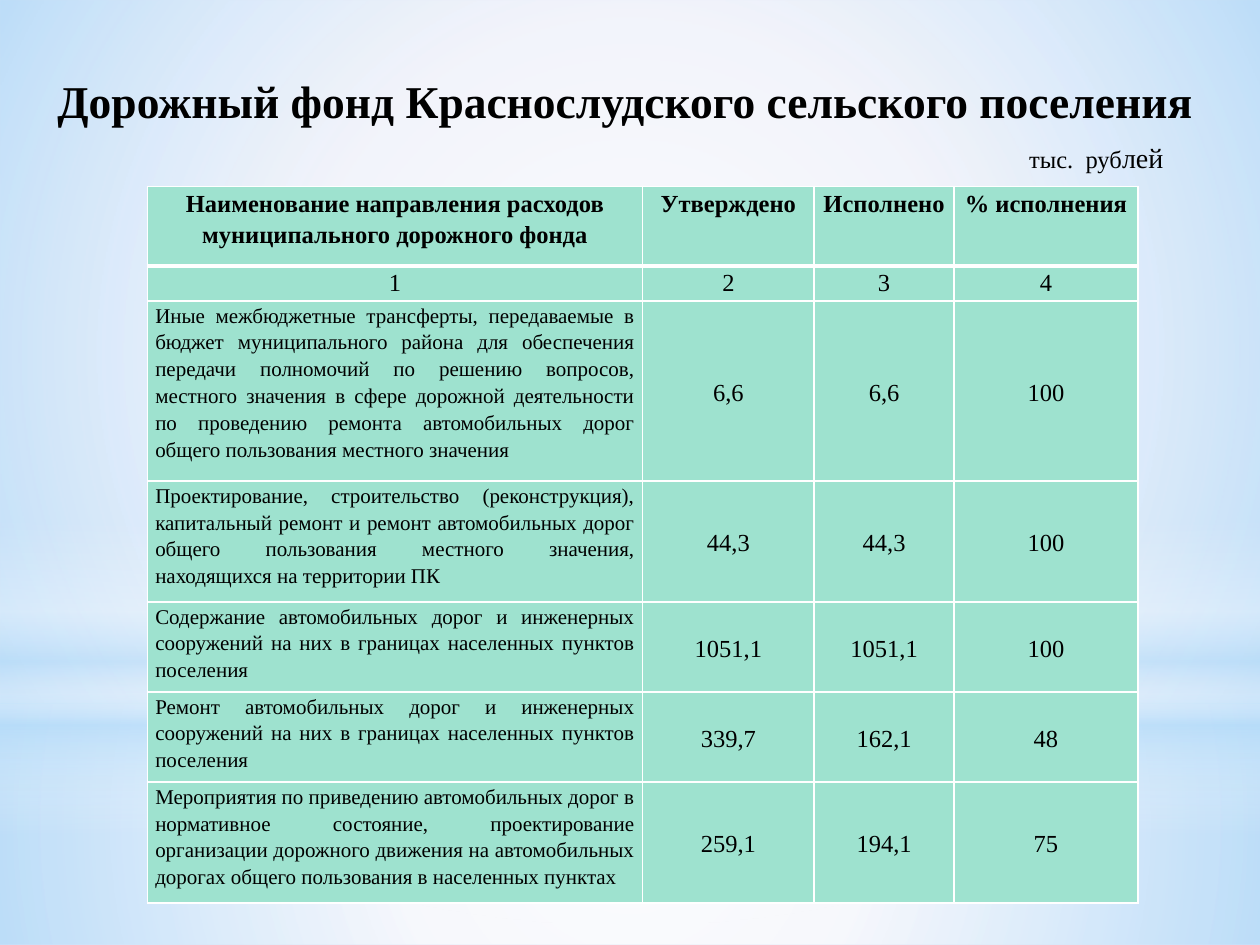
from dataclasses import dataclass

from lxml import etree
from pptx import Presentation
from pptx.dml.color import RGBColor
from pptx.enum import shapes, text
from pptx.oxml import ns
from pptx.util import Pt


@dataclass(frozen=True)
class Theme:
    font: str = "Times New Roman"
    ink: str = "000000"
    page: str = "DCE1F4"
    cell: str = "9EE2CF"
    white: str = "FFFFFF"
    sky: str = "B4DCFA"
    title: int = 26
    unit: int = 16
    body: int = 14
    small: int = 12


ALIGN = text.PP_ALIGN
MID = text.MSO_ANCHOR.MIDDLE
TOP = text.MSO_ANCHOR.TOP
RECT = shapes.MSO_SHAPE.RECTANGLE
OVAL = shapes.MSO_SHAPE.OVAL

HEAD = ["Наименование направления расходов муниципального дорожного фонда",
        "Утверждено", "Исполнено", "% исполнения"]
ROWS = [
    ["Иные межбюджетные трансферты, передаваемые в бюджет муниципального "
     "района для обеспечения передачи полномочий по решению вопросов, "
     "местного значения в сфере дорожной деятельности по проведению ремонта "
     "автомобильных дорог общего пользования местного значения",
     "6,6", "6,6", "100"],
    ["Проектирование, строительство (реконструкция), капитальный ремонт и "
     "ремонт автомобильных дорог общего пользования местного значения, "
     "находящихся на территории ПК", "44,3", "44,3", "100"],
    ["Содержание автомобильных дорог и инженерных сооружений на них в "
     "границах населенных пунктов поселения", "1051,1", "1051,1", "100"],
    ["Ремонт автомобильных дорог и инженерных сооружений на них в границах "
     "населенных пунктов поселения", "339,7", "162,1", "48"],
    ["Мероприятия по приведению автомобильных дорог в нормативное состояние, "
     "проектирование организации дорожного движения на автомобильных дорогах "
     "общего пользования в населенных пунктах", "259,1", "194,1", "75"],
]
COLS = [283, 98, 80, 105]
HIGH = [45.5, 20, 103, 69, 51.5, 51.5, 69]


def node(parent, tag, **attrs):
    """Add a DrawingML child with the given attributes."""
    child = etree.SubElement(parent, ns.qn("a:" + tag))
    for key, value in attrs.items():
        child.set(key, str(value))
    return child


class Deck:
    """Holds the theme and the slide being built."""

    def __init__(self, theme):
        self.theme = theme
        self.prs = Presentation()
        self.prs.slide_width, self.prs.slide_height = Pt(720), Pt(540)
        self.slide = self.prs.slides.add_slide(self.prs.slide_layouts[5])
        fill = self.slide.background.fill
        fill.solid()
        fill.fore_color.rgb = RGBColor.from_string(theme.page)

    def style(self, run, size, bold=False):
        font = run.font
        font.name, font.size, font.bold = self.theme.font, Pt(size), bold
        font.color.rgb = RGBColor.from_string(self.theme.ink)

    def glow(self, kind, box, stops, band=False):
        """Add a soft gradient shape; stops are (place, colour, opacity)."""
        shape = self.slide.shapes.add_shape(kind, *map(Pt, box))
        shape.shadow.inherit = False
        shape.line.fill.background()
        shape.fill.gradient()
        grad = shape.element.spPr.find(ns.qn("a:gradFill"))
        for child in list(grad):
            grad.remove(child)
        items = node(grad, "gsLst")
        for place, color, alpha in stops:
            stop = node(items, "gs", pos=place * 1000)
            node(node(stop, "srgbClr", val=color), "alpha", val=alpha * 1000)
        if band:
            node(grad, "lin", ang=90 * 60000, scaled=0)
        else:
            node(node(grad, "path", path="circle"), "fillToRect",
                 l=50000, t=50000, r=50000, b=50000)

    def title(self, words, box):
        shape = self.slide.shapes.title
        shape.left, shape.top, shape.width, shape.height = map(Pt, box)
        # The placeholder comes first by default, so lift it over the backdrop.
        self.slide.shapes.element.append(shape.element)
        frame = shape.text_frame
        frame.text = words
        frame.vertical_anchor = MID
        frame.auto_size = text.MSO_AUTO_SIZE.NONE
        frame.paragraphs[0].alignment = ALIGN.CENTER
        self.style(frame.paragraphs[0].runs[0], self.theme.title, True)

    def label(self, parts, box):
        """Add one line made of (words, size) parts."""
        frame = self.slide.shapes.add_textbox(*map(Pt, box)).text_frame
        frame.word_wrap = True
        for words, size in parts:
            run = frame.paragraphs[0].add_run()
            run.text = words
            self.style(run, size)

    def edge(self, cell, base):
        """Draw white borders, with the given width at the bottom."""
        props = cell._tc.get_or_add_tcPr()
        for at, side in enumerate(("lnL", "lnR", "lnT", "lnB")):
            line = node(props, side, w=Pt(base if side == "lnB" else 1))
            node(node(line, "solidFill"), "srgbClr", val=self.theme.white)
            props.insert(at, line)

    def cell(self, cell, words, size, align, anchor, bold, base):
        cell.text = words
        cell.vertical_anchor = anchor
        cell.margin_left = cell.margin_right = Pt(4.5)
        cell.margin_top = cell.margin_bottom = 0
        cell.fill.solid()
        cell.fill.fore_color.rgb = RGBColor.from_string(self.theme.cell)
        para = cell.text_frame.paragraphs[0]
        para.alignment, para.line_spacing = align, 1.15
        self.style(para.runs[0], size, bold)
        self.edge(cell, base)

    def table(self, rows, cols, high, left, top):
        table = self.slide.shapes.add_table(
            len(rows), len(cols), Pt(left), Pt(top),
            Pt(sum(cols)), Pt(sum(high))).table
        for col, width in zip(table.columns, cols):
            col.width = Pt(width)
        for r, (row, height) in enumerate(zip(rows, high)):
            table.rows[r].height = Pt(height)
            for c, words in enumerate(row):
                name = r > 1 and c == 0
                self.cell(table.cell(r, c), words,
                          self.theme.small if name else self.theme.body,
                          ALIGN.JUSTIFY if name else ALIGN.CENTER,
                          MID if r > 1 and c else TOP,
                          r == 0, 3 if r == 0 else 1)


def main():
    theme = Theme()
    white, sky = theme.white, theme.sky
    deck = Deck(theme)
    deck.glow(RECT, (0, 402, 720, 138),
              [(0, white, 91), (37, white, 76), (100, sky, 79)])
    deck.glow(RECT, (0, 0, 720, 402),
              [(0, white, 89), (48, white, 62), (100, sky, 79)])
    deck.glow(RECT, (0, 297, 720, 180),
              [(0, white, 0), (29, white, 30), (45, sky, 40),
               (55, white, 26), (65, sky, 60), (100, white, 0)], band=True)
    deck.glow(OVAL, (0, 126, 720, 402), [(0, white, 100), (56, white, 0)])
    deck.title("Дорожный фонд Краснослудского сельского поселения",
               (20, 37.5, 675, 39.5))
    numbers = [str(n + 1) for n in range(len(HEAD))]
    deck.table([HEAD, numbers, *ROWS], COLS, HIGH, 84.25, 106.5)
    deck.label([("тыс.  руб", theme.body), ("лей", theme.unit)],
               (581, 77, 139, 26.5))
    deck.prs.save("out.pptx")


if __name__ == "__main__":
    main()
